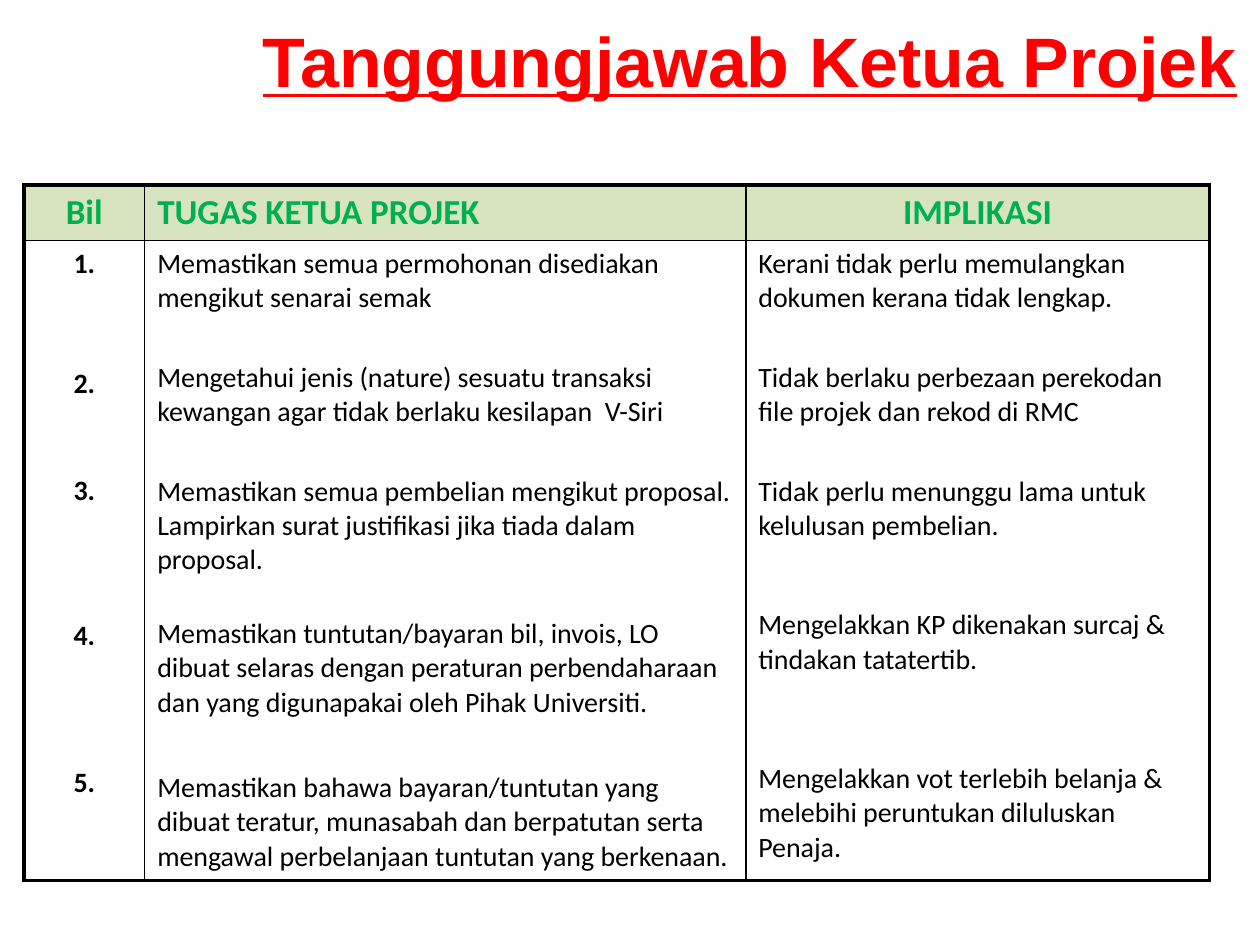
from dataclasses import dataclass
from typing import Optional

from lxml.etree import SubElement
from pptx import Presentation
from pptx.dml.color import RGBColor
from pptx.enum.text import MSO_ANCHOR as Anchor, PP_ALIGN as Align
from pptx.oxml.ns import qn
from pptx.util import Pt


@dataclass(frozen=True)
class Theme:
    title_font: str = "Arial"
    table_font: str = "Calibri"
    title_size: float = 40
    header_size: float = 20
    body_size: float = 16
    title: str = "FF0000"
    header: str = "00B050"
    header_fill: str = "D7E4BD"
    ink: str = "000000"
    paper: str = "FFFFFF"
    outer_line: float = 2.25
    inner_line: float = 1


@dataclass(frozen=True)
class Column:
    """A table column: its heading and its entries with the gap above each."""
    heading: str
    width: float
    entries: tuple[str, ...]
    gaps: tuple[float, ...]
    heading_align: Align = Align.CENTER
    entry_align: Align = Align.LEFT
    bold: bool = False
    fill: Optional[str] = None


THEME = Theme()
HEADER_HEIGHT, BODY_HEIGHT = 31.6, 365.8
COLUMNS = (
    Column("Bil", 69, tuple(f"{number}." for number in range(1, 6)),
           (0, 48.7, 41.6, 63.6, 64.3), entry_align=Align.CENTER, bold=True),
    Column("TUGAS KETUA PROJEK", 343.5, (
        "Memastikan semua permohonan disediakan mengikut senarai semak",
        "Mengetahui jenis (nature) sesuatu transaksi kewangan agar tidak "
        "berlaku kesilapan  V-Siri",
        "Memastikan semua pembelian mengikut proposal. Lampirkan surat "
        "justifikasi jika tiada dalam proposal.",
        "Memastikan tuntutan/bayaran bil, invois, LO dibuat selaras dengan "
        "peraturan perbendaharaan dan yang digunapakai oleh Pihak Universiti.",
        "Memastikan bahawa bayaran/tuntutan yang dibuat teratur, munasabah dan "
        "berpatutan serta mengawal perbelanjaan tuntutan yang berkenaan.",
    ), (0, 25.9, 25.9, 22.7, 29.3), heading_align=Align.LEFT),
    Column("IMPLIKASI", 265, (
        "Kerani tidak perlu memulangkan dokumen kerana tidak lengkap.",
        "Tidak berlaku perbezaan perekodan file projek dan rekod di RMC",
        "Tidak perlu menunggu lama untuk kelulusan pembelian.",
        "Mengelakkan KP dikenakan surcaj & tindakan tatatertib.",
        "Mengelakkan vot terlebih belanja & melebihi peruntukan diluluskan Penaja.",
    ), (0, 25.9, 25.9, 37.3, 48.7), fill=THEME.paper),
)


def write(paragraph, text: str, *, size: float, color: str, font: str,
          align: Align = Align.LEFT, bold: bool = False,
          underline: bool = False, before: float = 0) -> None:
    paragraph.alignment = align
    paragraph.space_before = Pt(before)
    run = paragraph.add_run()
    run.text = text
    run.font.name, run.font.size = font, Pt(size)
    run.font.bold, run.font.underline = bold, underline
    run.font.color.rgb = RGBColor.from_string(color)


def draw_borders(cell, row: int, column: int) -> None:
    """Give the cell thick lines on the table's edge and thin ones inside."""
    properties = cell._tc.get_or_add_tcPr()
    on_edge = {"a:lnL": column == 0, "a:lnR": column == len(COLUMNS) - 1,
               "a:lnT": row == 0, "a:lnB": row == 1}
    for tag, outer in on_edge.items():
        width = THEME.outer_line if outer else THEME.inner_line
        line = SubElement(properties, qn(tag), w=str(Pt(width)))
        fill = SubElement(line, qn("a:solidFill"))
        SubElement(fill, qn("a:srgbClr"), val=THEME.ink)


def fill_cell(cell, color: Optional[str]) -> None:
    if color is None:
        cell.fill.background()
    else:
        cell.fill.solid()
        cell.fill.fore_color.rgb = RGBColor.from_string(color)


def add_title(slide, text: str) -> None:
    box = slide.shapes.add_textbox(Pt(119.5), Pt(6.5), Pt(617.8), Pt(55.4))
    frame = box.text_frame
    frame.word_wrap = True
    frame.vertical_anchor = Anchor.MIDDLE
    write(frame.paragraphs[0], text, size=THEME.title_size, color=THEME.title,
          font=THEME.title_font, align=Align.CENTER, bold=True, underline=True)


def add_duty_table(slide) -> None:
    width = sum(column.width for column in COLUMNS)
    table = slide.shapes.add_table(
        2, len(COLUMNS), Pt(13.7), Pt(105.8), Pt(width),
        Pt(HEADER_HEIGHT + BODY_HEIGHT)).table
    table.first_row = table.horz_banding = False
    table.rows[0].height, table.rows[1].height = Pt(HEADER_HEIGHT), Pt(BODY_HEIGHT)

    for index, column in enumerate(COLUMNS):
        table.columns[index].width = Pt(column.width)
        header, body = table.cell(0, index), table.cell(1, index)
        for row, cell in enumerate((header, body)):
            draw_borders(cell, row, index)
        fill_cell(header, THEME.header_fill)
        fill_cell(body, column.fill)

        header.vertical_anchor = Anchor.MIDDLE
        write(header.text_frame.paragraphs[0], column.heading,
              size=THEME.header_size, color=THEME.header, font=THEME.table_font,
              align=column.heading_align, bold=True)
        frame = body.text_frame
        for position, (entry, gap) in enumerate(zip(column.entries, column.gaps)):
            paragraph = frame.add_paragraph() if position else frame.paragraphs[0]
            write(paragraph, entry, size=THEME.body_size, color=THEME.ink,
                  font=THEME.table_font, align=column.entry_align,
                  bold=column.bold, before=gap)


def main() -> None:
    presentation = Presentation()
    presentation.slide_width, presentation.slide_height = Pt(720), Pt(540)
    slide = presentation.slides.add_slide(presentation.slide_layouts[6])
    add_duty_table(slide)
    add_title(slide, "Tanggungjawab Ketua Projek")
    presentation.save("out.pptx")


if __name__ == "__main__":
    main()
